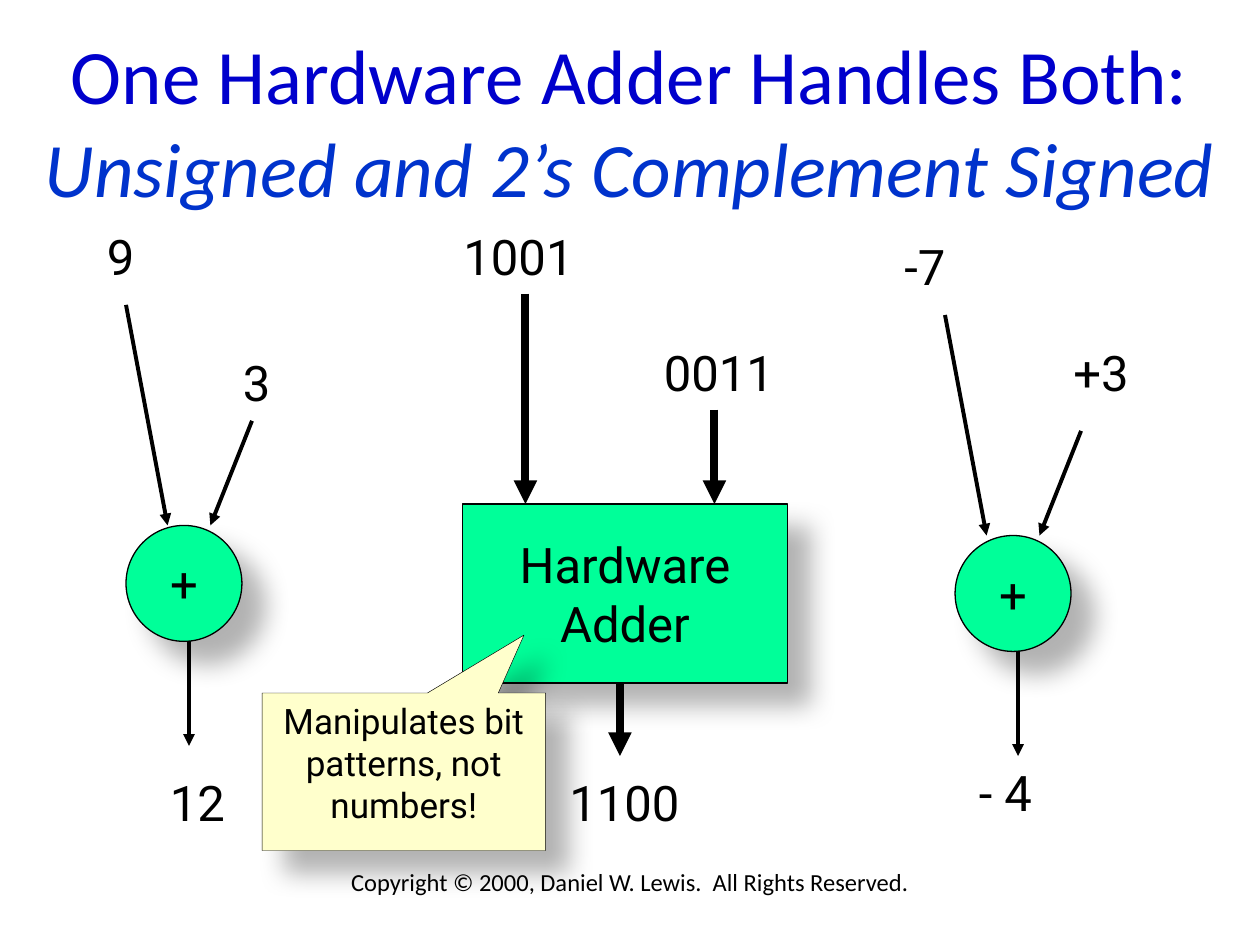
"""Build the slide on one hardware adder serving unsigned and signed addition."""
from dataclasses import dataclass

from lxml import etree
from pptx import Presentation
from pptx.dml.color import RGBColor
from pptx.enum.shapes import MSO_CONNECTOR, MSO_SHAPE
from pptx.enum.text import MSO_ANCHOR, PP_ALIGN
from pptx.oxml import parse_xml
from pptx.oxml.ns import nsdecls, qn
from pptx.util import Inches, Pt

STRAIGHT = MSO_CONNECTOR.STRAIGHT
OVAL, RECTANGLE = MSO_SHAPE.OVAL, MSO_SHAPE.RECTANGLE
CALLOUT = MSO_SHAPE.RECTANGULAR_CALLOUT
CENTER, LEFT = PP_ALIGN.CENTER, PP_ALIGN.LEFT
TOP, MIDDLE = MSO_ANCHOR.TOP, MSO_ANCHOR.MIDDLE


@dataclass(frozen=True)
class Theme:
    """Colours, fonts, type sizes and line widths."""
    title: str = "0000CC"
    subtitle: str = "0033CC"
    ink: str = "000000"
    adder: str = "00FF99"
    note: str = "FFFFCC"
    heading_font: str = "Calibri"
    body_font: str = "Roboto"
    title_size: int = 44
    label_size: int = 28
    note_size: int = 20
    footer_size: int = 14
    thin: float = 2.25
    thick: float = 4.5
    outline: float = 0.75
    hairline: float = 0.25


THEME = Theme()

TITLE = "One Hardware Adder Handles Both:"
SUBTITLE = "Unsigned and 2’s Complement Signed"
FOOTER = "Copyright © 2000, Daniel W. Lewis.  All Rights Reserved."
HARDWARE = ["Hardware", "Adder"]
NOTE = "Manipulates bit patterns, not numbers!"

LABEL_HEIGHT = 0.57
LABELS = [
    ("9", 0.75, 1.75, 0.83), ("3", 1.83, 2.75, 0.5), ("12", 1.25, 6.08, 0.67),
    ("-7", 7.08, 1.83, 0.83), ("+3", 8.42, 2.67, 0.92), ("- 4", 7.67, 6, 1.17),
    ("1001", 3.58, 1.75, 1.08), ("0011", 5.17, 2.67, 1.08), ("1100", 4.42, 6.08, 1.17),
]

DIAMETER = 0.92
ADDERS = [
    {"left": 1, "top": 4.17, "first_arrow": 1},
    {"left": 7.58, "top": 4.25, "first_arrow": 7.5},
]
BLOCK = (3.67, 4, 2.58, 1.42)
BLOCK_ARROWS = [
    ((4.17, 2.33), (4.17, 4)),
    ((5.67, 3.25), (5.67, 4)),
    ((4.92, 5.42), (4.92, 6)),
]
NOTE_BOX = (2.08, 5.5, 2.25, 1.25)
NOTE_TIP = (0.424, -0.868)


def colour(value):
    return RGBColor.from_string(value)


def write(shape, lines, size, font=THEME.body_font, align=CENTER, anchor=TOP, wrap=True):
    """Write (text, colour, italic) lines into one paragraph."""
    frame = shape.text_frame
    frame.word_wrap = wrap
    frame.vertical_anchor = anchor
    paragraph = frame.paragraphs[0]
    paragraph.alignment = align
    for index, (text, ink, italic) in enumerate(lines):
        if index:
            paragraph.add_line_break()
        run = paragraph.add_run()
        run.text = text
        run.font.name = font
        run.font.size = Pt(size)
        run.font.italic = italic
        run.font.color.rgb = colour(ink)


def plain(*texts):
    return [(text, THEME.ink, False) for text in texts]


def add_text(slide, box, lines, size, **options):
    write(slide.shapes.add_textbox(*map(Inches, box)), lines, size, **options)


def add_shadowed(slide, kind, box, fill, width):
    shape = slide.shapes.add_shape(kind, *map(Inches, box))
    shape.fill.solid()
    shape.fill.fore_color.rgb = colour(fill)
    shape.line.color.rgb = colour(THEME.ink)
    shape.line.width = Pt(width)
    shape.shadow.inherit = False
    effects = shape._element.spPr.find(qn("a:effectLst"))
    effects.append(parse_xml(
        f'<a:outerShdw {nsdecls("a")} blurRad="{Pt(15)}" dist="{Pt(18)}" dir="2700000" '
        f'algn="ctr" rotWithShape="0"><a:srgbClr val="{THEME.ink}">'
        '<a:alpha val="30000"/></a:srgbClr></a:outerShdw>'))
    return shape


def add_arrow(slide, start, end, width):
    arrow = slide.shapes.add_connector(STRAIGHT, *map(Inches, (*start, *end)))
    arrow.line.color.rgb = colour(THEME.ink)
    arrow.line.width = Pt(width)
    etree.SubElement(arrow.line._get_or_add_ln(), qn("a:tailEnd"), type="triangle")
    etree.SubElement(arrow._element.spPr, qn("a:effectLst"))


def add_adder(slide, left, top, first_arrow):
    circle = add_shadowed(slide, OVAL, (left, top, DIAMETER, DIAMETER),
                          THEME.adder, THEME.outline)
    write(circle, plain("+"), THEME.label_size, anchor=MIDDLE, wrap=False)
    bottom = top + DIAMETER
    for start, end in [
        ((first_arrow, top - 1.75), (first_arrow + 0.33, top)),
        ((left + 1, top - 0.83), (left + 0.67, top)),
        ((left + 0.5, bottom), (left + 0.5, bottom + 0.83)),
    ]:
        add_arrow(slide, start, end, THEME.thin)


def main():
    presentation = Presentation()
    presentation.slide_width, presentation.slide_height = Inches(10), Inches(7.5)
    slide = presentation.slides.add_slide(presentation.slide_layouts[6])

    add_text(slide, (0.75, 6.83, 8.5, 0.5), plain(FOOTER), THEME.footer_size,
             font=THEME.heading_font)
    add_text(slide, (0, 0.33, 10, 1.25),
             [(TITLE, THEME.title, False), (SUBTITLE, THEME.subtitle, True)],
             THEME.title_size, font=THEME.heading_font, anchor=MIDDLE)
    for text, left, top, width in LABELS:
        add_text(slide, (left, top, width, LABEL_HEIGHT), plain(text),
                 THEME.label_size, align=LEFT)
    for adder in ADDERS:
        add_adder(slide, **adder)

    block = add_shadowed(slide, RECTANGLE, BLOCK, THEME.adder, THEME.outline)
    write(block, plain(*HARDWARE), THEME.label_size, anchor=MIDDLE, wrap=False)
    for start, end in BLOCK_ARROWS:
        add_arrow(slide, start, end, THEME.thick)

    note = add_shadowed(slide, CALLOUT, NOTE_BOX, THEME.note, THEME.hairline)
    note.adjustments[0], note.adjustments[1] = NOTE_TIP
    write(note, plain(NOTE), THEME.note_size)

    presentation.save("out.pptx")


if __name__ == "__main__":
    main()
